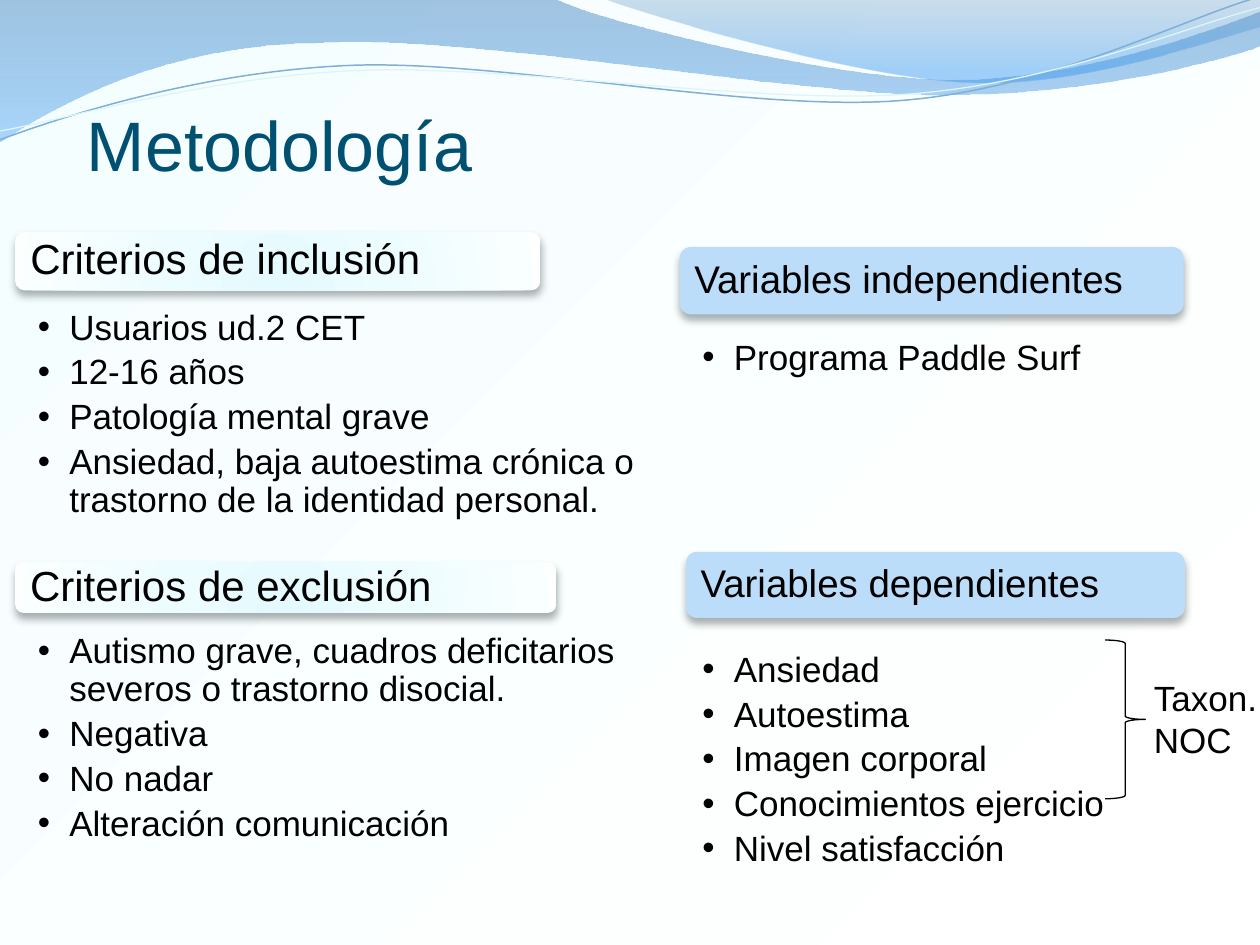
"""Builds the methodology slide: criteria on the left, variables on the right."""
from dataclasses import dataclass
from typing import Optional

from lxml.etree import SubElement
from pptx import Presentation
from pptx.dml.color import RGBColor
from pptx.enum.shapes import MSO_SHAPE
from pptx.enum.text import MSO_ANCHOR, MSO_AUTO_SIZE, PP_ALIGN
from pptx.oxml import parse_xml
from pptx.oxml.ns import nsdecls, qn
from pptx.util import Inches, Pt

COLUMNS, ROWS = 100, 75
CELL = Inches(0.1)
BLACK = "000000"
WHITE_GLOW = [(0, "E4FAFE", 100), (43, "EDFDFF", 100), (93, "F9FEFF", 100), (100, "FDFFFF", 100)]
CIRCLE = '<a:path path="circle"><a:fillToRect l="50000" t="130000" r="50000" b="-30000"/></a:path>'


@dataclass
class Area:
    left: float
    top: float
    width: float
    height: float

    def lengths(self) -> list:
        return [round(value * CELL) for value in (self.left, self.top, self.width, self.height)]


@dataclass
class Section:
    heading: str
    header: Area
    body: Area
    items: list
    size: int
    inset: float
    fill: Optional[str] = None


@dataclass
class Wave:
    start: tuple
    segments: list
    stops: Optional[list] = None
    line: Optional[str] = None
    width: float = 0


SECTIONS = [
    Section("Criterios de inclusión", Area(1.2, 18.4, 41.7, 4.65), Area(1.2, 24.3, 57.5, 11.7),
            ["Usuarios ud.2 CET", "12-16 años", "Patología mental grave",
             "Ansiedad, baja autoestima crónica o trastorno de la identidad personal."], 24, 1),
    Section("Criterios de exclusión", Area(1.2, 44.6, 42.95, 4.05), Area(1.2, 50, 57.5, 25),
            ["Autismo grave, cuadros deficitarios severos o trastorno disocial.",
             "Negativa", "No nadar", "Alteración comunicación"], 24, 1),
    Section("Variables independientes", Area(53.95, 19.6, 40, 5.35), Area(53.95, 26.7, 46, 8),
            ["Programa Paddle Surf"], 22, 0.9, "BCDDFA"),
    Section("Variables dependientes", Area(54.45, 43.8, 39.6, 5.25), Area(53.95, 51.45, 46, 20.6),
            ["Ansiedad", "Autoestima", "Imagen corporal", "Conocimientos ejercicio",
             "Nivel satisfacción"], 22, 0.9, "BCDDFA"),
]

WAVES = [
    Wave((0, -0.1), [(44, -0.1), (47.6, 1.7, 66.4, 6.3, 75.8, 6.3), (85.3, 6.3, 95.8, 2.6, 100, 0.9),
                     (100.1, 3.6), (98.3, 4.4, 87, 7.6, 74.6, 7.5), (62.2, 7.5, 38.2, 2.8, 25.7, 3.4),
                     (12.9, 3.5, 4.6, 8.3, -0.1, 11.3)],
         stops=[(0, "377EBE", 45), (100, "69B5F9", 55)]),
    Wave((47.9, -0.1), [(50.9, 1.1, 68.2, 6.2, 76.9, 6.5), (85.6, 6.9, 96.1, 3.2, 100, 2.1), (100, 0)],
         stops=[(0, "5F93C1", 30), (80, "3496F1", 45)]),
    Wave((0, 11.1), [(4.8, 9.3, 15.8, 5.7, 27.7, 5.2), (39.5, 4.7, 59.3, 8.9, 71.3, 8),
                     (83.3, 7.1, 93.8, 1.5, 99.8, -0.2)], line="7FAFD9", width=0.85),
    Wave((0, 10.4), [(4.7, 9.6, 16.4, 6.1, 28.3, 5.6), (40.3, 5.1, 59.7, 8.3, 71.7, 7.5),
                     (83.6, 6.7, 94.1, 2.1, 100, 0.6)], line="DBF5F9", width=0.75),
]


def color(value: str) -> RGBColor:
    """Turn a hex string into a colour."""
    return RGBColor.from_string(value)


def set_gradient(properties, stops: list, direction: str) -> None:
    """Replace the solid fill of an element by a gradient."""
    marks = "".join(
        f'<a:gs pos="{place * 1000}"><a:srgbClr val="{tone}"><a:alpha val="{alpha * 1000}"/></a:srgbClr></a:gs>'
        for place, tone, alpha in stops)
    gradient = parse_xml(f'<a:gradFill {nsdecls("a")} rotWithShape="1"><a:gsLst>{marks}</a:gsLst>{direction}</a:gradFill>')
    properties.replace(properties.find(qn("a:solidFill")), gradient)


def linear(degrees: int) -> str:
    """Describe a linear gradient direction."""
    return f'<a:lin ang="{degrees * 60000}" scaled="0"/>'


def add_shadow(shape) -> None:
    """Give a shape a soft shadow straight below it."""
    shape.shadow.inherit = False
    effects = shape._element.spPr.find(qn("a:effectLst"))
    effects.append(parse_xml(
        f'<a:outerShdw {nsdecls("a")} blurRad="{Pt(4.5)}" dist="{Pt(3)}" dir="5400000" rotWithShape="0">'
        '<a:srgbClr val="4D5658"><a:alpha val="48000"/></a:srgbClr></a:outerShdw>'))


def format_text(frame, size: int, tone: str = BLACK) -> None:
    """Set font, size, colour and left alignment of all text in a frame."""
    for para in frame.paragraphs:
        para.alignment = PP_ALIGN.LEFT
        for span in para.runs:
            span.font.name, span.font.size = "Arial", Pt(size)
            span.font.color.rgb = color(tone)


def set_insets(frame, side: float, end: float) -> None:
    """Set the horizontal and vertical insets of a frame in grid cells."""
    frame.margin_left = frame.margin_right = round(side * CELL)
    frame.margin_top = frame.margin_bottom = round(end * CELL)


def bend_segments(shape, segments: list) -> None:
    """Join each three lines that belong to a curve into one Bézier segment."""
    lines = iter(list(shape._element.iter(qn("a:lnTo"))))
    for segment in segments:
        first = next(lines)
        if len(segment) == 6:
            first.tag = qn("a:cubicBezTo")
            for other in (next(lines), next(lines)):
                first.append(other[0])
                other.getparent().remove(other)


def draw_wave(page, wave: Wave) -> None:
    """Draw a filled wave or a thin wave line."""
    builder = page.shapes.build_freeform(*wave.start, scale=1.0)
    points = [pair for segment in wave.segments for pair in zip(segment[::2], segment[1::2])]
    builder = page.shapes.build_freeform(*(value * CELL for value in wave.start), scale=1.0)
    builder.add_line_segments([(x * CELL, y * CELL) for x, y in points], close=wave.stops is not None)
    shape = builder.convert_to_shape()
    bend_segments(shape, wave.segments)
    shape.shadow.inherit = False
    if wave.stops:
        shape.fill.solid()
        set_gradient(shape._element.spPr, wave.stops, linear(90))
        shape.line.fill.background()
    else:
        shape.fill.background()
        shape.line.color.rgb = color(wave.line)
        shape.line.width = Pt(wave.width)


def draw_section(page, section: Section) -> None:
    """Draw a rounded heading and its bulleted list."""
    header = page.shapes.add_shape(MSO_SHAPE.ROUNDED_RECTANGLE, *section.header.lengths())
    header.fill.solid()
    if section.fill:
        header.fill.fore_color.rgb = color(section.fill)
    else:
        set_gradient(header._element.spPr, WHITE_GLOW, CIRCLE)
    header.line.fill.background()
    add_shadow(header)
    frame = header.text_frame
    frame.text = section.heading
    frame.vertical_anchor = MSO_ANCHOR.MIDDLE
    set_insets(frame, section.inset, section.inset)
    frame.paragraphs[0].line_spacing = 0.9
    format_text(frame, section.size)

    frame = page.shapes.add_textbox(*section.body.lengths()).text_frame
    frame.word_wrap = True
    set_insets(frame, 1.8, 0.3)
    frame.text = "\n".join(section.items)
    format_text(frame, 20)
    for para in frame.paragraphs:
        para.line_spacing = 0.9
        properties = para._p.get_or_add_pPr()
        properties.set("marL", str(Inches(0.25)))
        properties.set("indent", str(-Inches(0.25)))
        SubElement(SubElement(properties, qn("a:spcAft")), qn("a:spcPct")).set("val", "20000")
        SubElement(properties, qn("a:buFont")).set("typeface", "Arial")
        SubElement(properties, qn("a:buChar")).set("char", "•")


def draw_taxonomy(page) -> None:
    """Draw the brace and its label beside the dependent variables."""
    brace = page.shapes.add_shape(MSO_SHAPE.RIGHT_BRACE, *Area(87.7, 50.8, 3.2, 12.6).lengths())
    brace.fill.background()
    brace.line.color.rgb = color(BLACK)
    brace.line.width = Pt(0.75)
    brace.shadow.inherit = False
    frame = page.shapes.add_textbox(*Area(90.6, 53.2, 9.4, 7.7).lengths()).text_frame
    frame.text = "Taxon.\nNOC"
    frame.word_wrap = True
    frame.margin_right = 0
    format_text(frame, 20)


def main() -> None:
    """Build the deck and save it."""
    deck = Presentation()
    deck.slide_width, deck.slide_height = COLUMNS * CELL, ROWS * CELL
    page = deck.slides.add_slide(deck.slide_layouts[5])
    page.background.fill.solid()
    set_gradient(page._element.find(".//" + qn("p:bgPr")),
                 [(0, "FFFFFF", 100), (100, "F5FEFF", 100)], linear(225))
    title = page.shapes.title
    title.left, title.top, title.width, title.height = Area(5.9, 7.55, 32.9, 7.7).lengths()
    title.text_frame.text = "Metodología"
    title.text_frame.auto_size = MSO_AUTO_SIZE.NONE
    format_text(title.text_frame, 40, "005071")
    for wave in WAVES:
        draw_wave(page, wave)
    for section in SECTIONS:
        draw_section(page, section)
    draw_taxonomy(page)
    deck.save("out.pptx")


if __name__ == "__main__":
    main()
